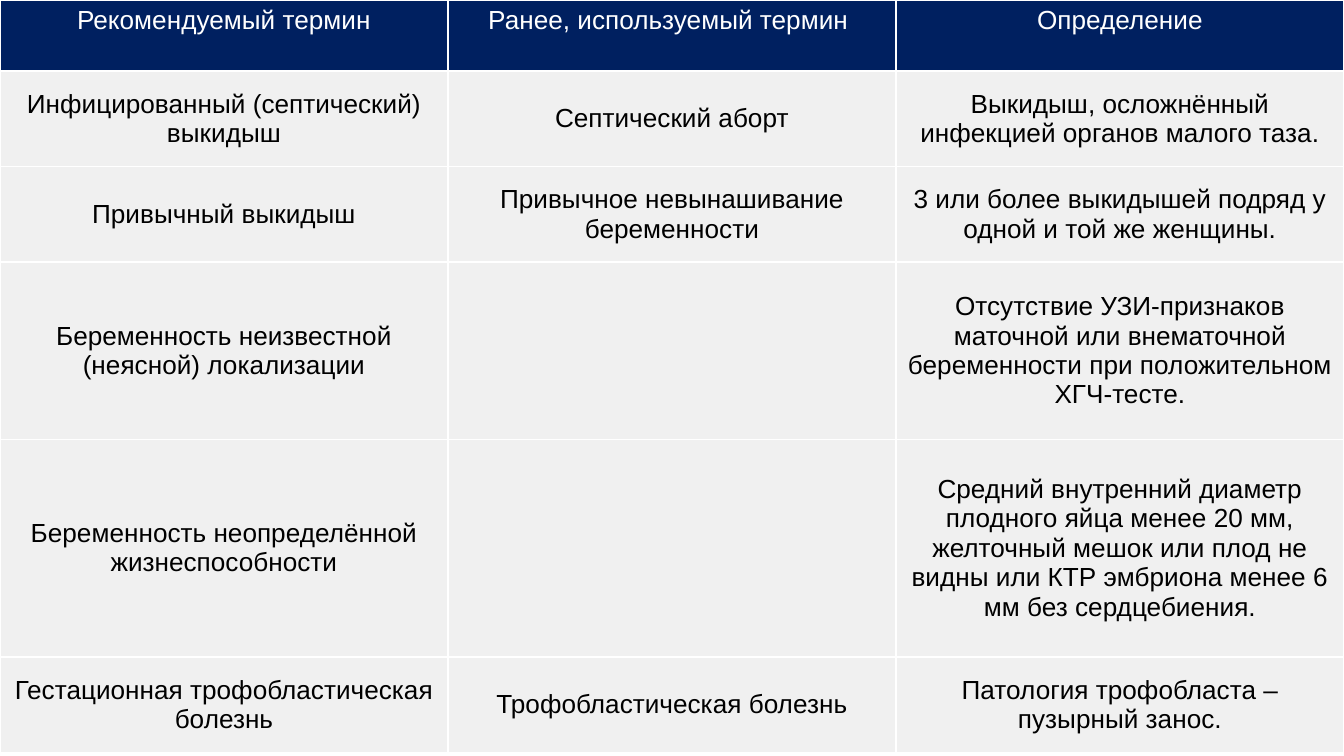
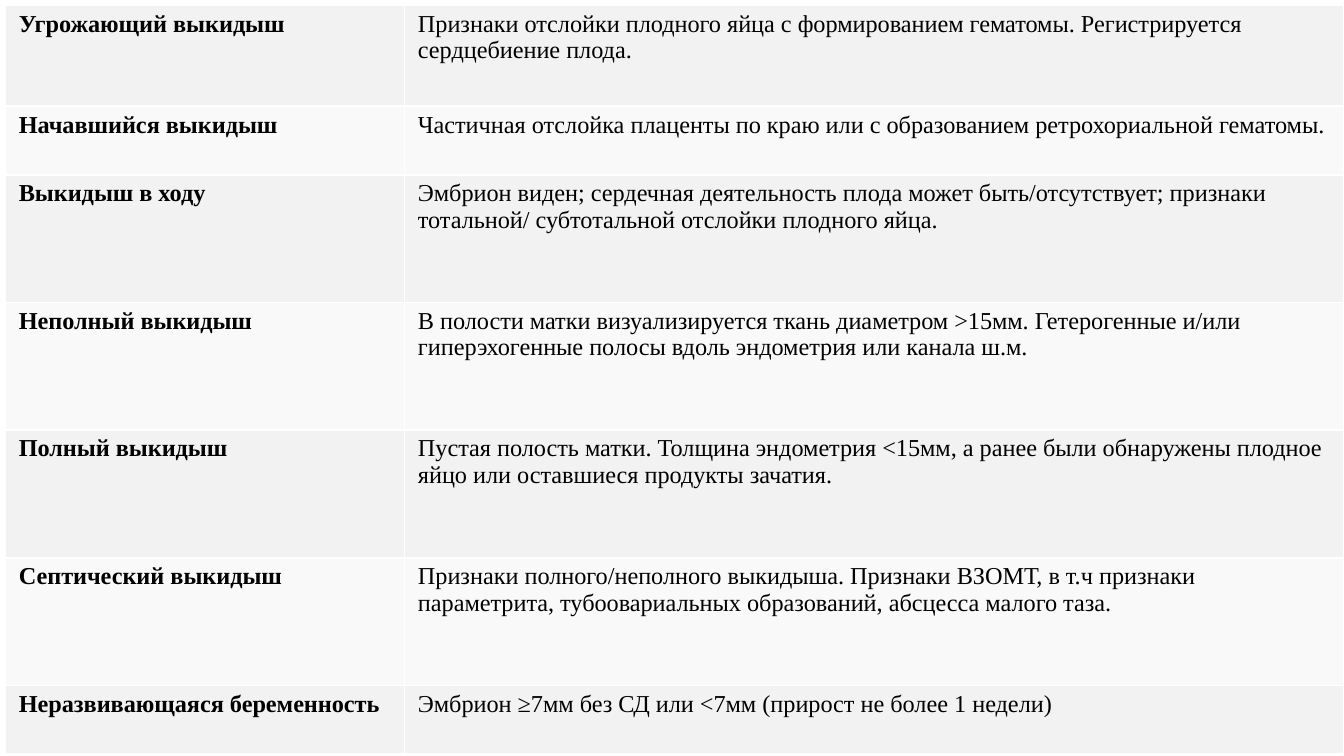
"""Build two slides of miscarriage terms and their ultrasound signs, each filled by a table."""
from lxml import etree
from pptx import Presentation
from pptx.dml.color import RGBColor
from pptx.enum.text import MSO_ANCHOR, PP_ALIGN
from pptx.oxml.ns import qn
from pptx.util import Inches, Pt

TOP, MIDDLE = MSO_ANCHOR.TOP, MSO_ANCHOR.MIDDLE
LEFT, CENTER = PP_ALIGN.LEFT, PP_ALIGN.CENTER

WHITE = RGBColor(0xFF, 0xFF, 0xFF)
BLACK = RGBColor(0x00, 0x00, 0x00)
NAVY = RGBColor(0x00, 0x20, 0x60)
TERM_GREY = RGBColor(0xF0, 0xF0, 0xF0)
BAND_GREYS = (RGBColor(0xF2, 0xF2, 0xF2), RGBColor(0xF9, 0xF9, 0xF9))

SLIDE_WIDTH = 10
SLIDE_HEIGHT = SLIDE_WIDTH * 9 / 16
SIDES = ("L", "R", "T", "B")
BORDER_WIDTH = 1
MARGIN_Y = 0.04

TERMS = [
    ("Рекомендуемый термин", "Ранее, используемый термин ", "Определение"),
    ("Инфицированный (септический) выкидыш", "Септический аборт",
     "Выкидыш, осложнённый инфекцией органов малого таза."),
    ("Привычный выкидыш", "Привычное невынашивание беременности",
     "3 или более выкидышей подряд у одной и той же женщины."),
    ("Беременность неизвестной (неясной) локализации", "",
     "Отсутствие УЗИ-признаков маточной или внематочной беременности "
     "при положительном ХГЧ-тесте."),
    ("Беременность неопределённой жизнеспособности", "",
     "Средний внутренний диаметр плодного яйца менее 20 мм, желточный мешок "
     "или плод не видны или КТР эмбриона менее 6 мм без сердцебиения."),
    ("Гестационная трофобластическая болезнь", "Трофобластическая болезнь",
     "Патология трофобласта – пузырный занос."),
]
SIGNS = [
    ("Угрожающий выкидыш",
     "Признаки отслойки плодного яйца с формированием гематомы. "
     "Регистрируется сердцебиение плода."),
    ("Начавшийся выкидыш",
     "Частичная отслойка плаценты по краю или с образованием ретрохориальной гематомы."),
    ("Выкидыш в ходу",
     "Эмбрион виден; сердечная деятельность плода может быть/отсутствует; "
     "признаки тотальной/ субтотальной отслойки плодного яйца."),
    ("Неполный выкидыш",
     "В полости матки визуализируется ткань диаметром >15мм. Гетерогенные и/или "
     "гиперэхогенные полосы вдоль эндометрия или канала ш.м."),
    ("Полный выкидыш",
     "Пустая полость матки. Толщина эндометрия <15мм, а ранее были обнаружены "
     "плодное яйцо или оставшиеся продукты зачатия."),
    ("Септический выкидыш",
     "Признаки полного/неполного выкидыша. Признаки ВЗОМТ, в т.ч признаки "
     "параметрита, тубоовариальных образований, абсцесса малого таза."),
    ("Неразвивающаяся беременность",
     "Эмбрион ≥7мм без СД или <7мм (прирост не более 1 недели)"),
]
TERM_ROWS = [0.53, 0.71, 0.71, 1.32, 1.62, 0.71]
SIGN_ROWS = [0.75, 0.51] + [0.95] * 4 + [0.51]
TERM_COLUMNS = [SLIDE_WIDTH / 3] * 3
SIGN_OFFSET = 0.04
SIGN_COLUMNS = [2.97, SLIDE_WIDTH - SIGN_OFFSET - 2.97]


def term_style(row, column):
    """Return the look of one cell of the terms table."""
    header = row == 0
    return {
        "fill": NAVY if header else TERM_GREY,
        "align": CENTER,
        "anchor": TOP if header else MIDDLE,
        "margin": 0.07,
        "color": WHITE if header else BLACK,
        "font": {"name": "Arial", "size": Pt(14), "bold": False},
    }


def sign_style(row, column):
    """Return the look of one cell of the signs table."""
    return {
        "fill": BAND_GREYS[row % 2],
        "align": LEFT,
        "anchor": TOP,
        "margin": 0.1,
        "color": BLACK,
        "font": {"name": "Times New Roman", "size": Pt(13), "bold": column == 0},
    }


def apply(target, values):
    """Set each named attribute on the target."""
    for name, value in values.items():
        setattr(target, name, value)


def add_borders(cell):
    """Draw white lines on the four sides of a cell."""
    properties = cell._tc.get_or_add_tcPr()
    for index, side in enumerate(SIDES):
        line = etree.Element(qn(f"a:ln{side}"), w=str(Pt(BORDER_WIDTH)))
        fill = etree.SubElement(line, qn("a:solidFill"))
        etree.SubElement(fill, qn("a:srgbClr"), val=str(WHITE))
        properties.insert(index, line)


def fill_cell(cell, text, style):
    """Write the text of a cell and give it its look."""
    cell.fill.solid()
    cell.fill.fore_color.rgb = style["fill"]
    add_borders(cell)
    side, edge = Inches(style["margin"]), Inches(MARGIN_Y)
    apply(cell, {"vertical_anchor": style["anchor"],
                 "margin_left": side, "margin_right": side,
                 "margin_top": edge, "margin_bottom": edge})
    para = cell.text_frame.paragraphs[0]
    para.alignment = style["align"]
    if text:
        span = para.add_run()
        span.text = text
        apply(span.font, style["font"])
        span.font.color.rgb = style["color"]


def add_table_slide(deck, content, offset, columns, rows, style_of):
    """Add a blank slide with one table starting at the offset from the corner."""
    slide = deck.slides.add_slide(deck.slide_layouts[6])
    box = [Inches(length) for length in (offset, offset, sum(columns), sum(rows))]
    table = slide.shapes.add_table(len(rows), len(columns), *box).table
    for column, width in zip(table.columns, columns):
        column.width = Inches(width)
    for row, height in zip(table.rows, rows):
        row.height = Inches(height)
    for row, texts in enumerate(content):
        for column, text in enumerate(texts):
            fill_cell(table.cell(row, column), text, style_of(row, column))


def main():
    """Build and save the deck."""
    deck = Presentation()
    deck.slide_width, deck.slide_height = Inches(SLIDE_WIDTH), Inches(SLIDE_HEIGHT)
    add_table_slide(deck, TERMS, 0, TERM_COLUMNS, TERM_ROWS, term_style)
    add_table_slide(deck, SIGNS, SIGN_OFFSET, SIGN_COLUMNS, SIGN_ROWS, sign_style)
    deck.save("out.pptx")


if __name__ == "__main__":
    main()
